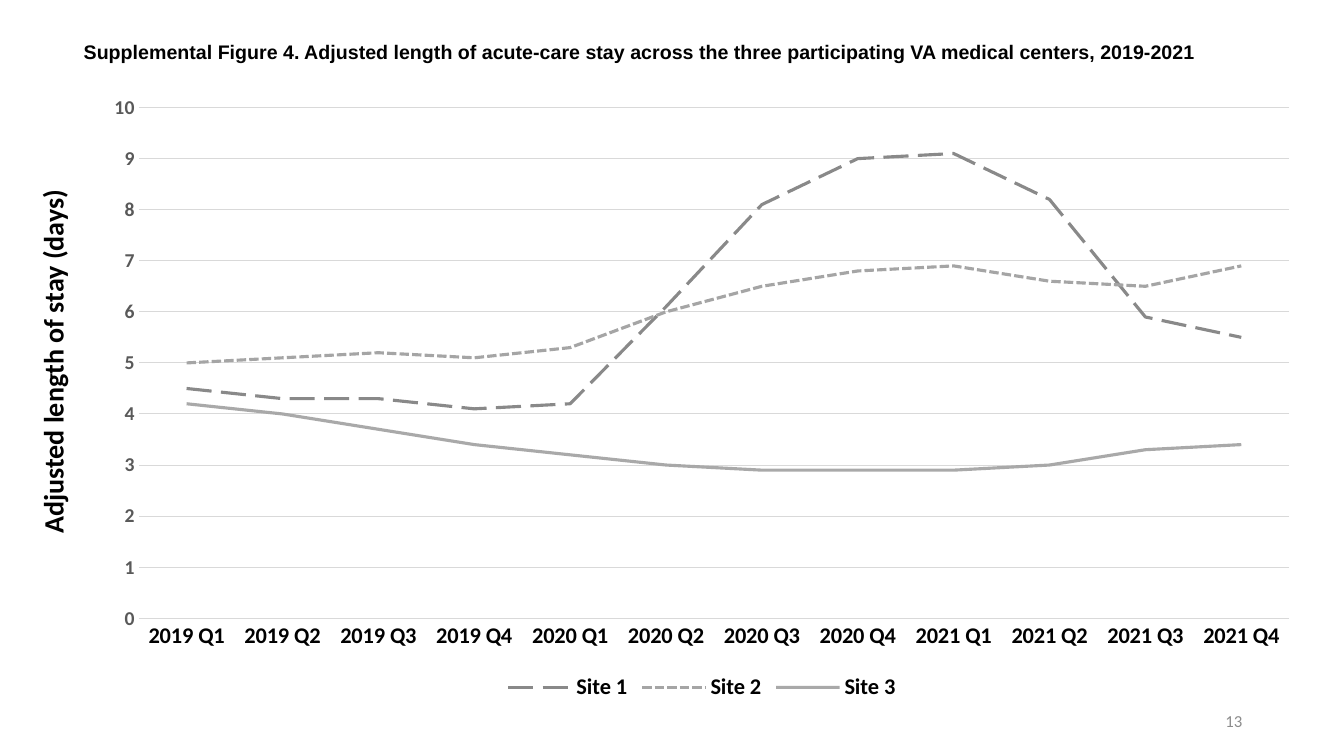
from dataclasses import dataclass
from lxml import etree
from pptx import Presentation
from pptx import util as u
from pptx.chart.data import CategoryChartData
from pptx.dml.color import RGBColor
from pptx.enum import chart as ch, dml, text
from pptx.oxml import parse_xml
from pptx.oxml.ns import nsdecls, qn

# Content
TITLE = ("Supplemental Figure 4. Adjusted length of acute-care stay across "
         "the three participating VA medical centers, 2019-2021")
AXIS = "Adjusted length of stay (days)"
PAGE = "13"
CATS = [f"{year} Q{q}" for year in (2019, 2020, 2021) for q in range(1, 5)]
SITES = {
    "Site 1": (4.5, 4.3, 4.3, 4.1, 4.2, 6.1, 8.1, 9, 9.1, 8.2, 5.9, 5.5),
    "Site 2": (5, 5.1, 5.2, 5.1, 5.3, 6, 6.5, 6.8, 6.9, 6.6, 6.5, 6.9),
    "Site 3": (4.2, 4, 3.7, 3.4, 3.2, 3, 2.9, 2.9, 2.9, 3, 3.3, 3.4),
}


@dataclass(frozen=True)
class Theme:
    ink: str = "000000"
    tick: str = "595959"
    grid: str = "D9D9D9"
    page: str = "8C8C8C"
    dark: str = "898989"
    light: str = "A5A5A5"
    head: str = "Arial"
    body: str = "Calibri"
    big: int = 20
    label: int = 16
    mid: int = 14
    small: int = 12
    base: int = 10


T = Theme()
DASH = dml.MSO_LINE
STYLES = [  # colour, dash, opacity in percent
    (T.dark, DASH.LONG_DASH, 100),
    (T.light, DASH.SQUARE_DOT, 100),
    (T.light, DASH.SOLID, 94),
]
PLOT = {"x": 0.04, "y": 0.04, "w": 0.94, "h": 0.82}  # shares of the chart


def style(font, size, color, name=T.body, bold=True):
    font.size, font.name, font.bold = u.Pt(size), name, bold
    font.color.rgb = RGBColor.from_string(color)


def stroke(line, color, width):
    line.width = u.Pt(width)
    line.color.rgb = RGBColor.from_string(color)


def write(shape, words, *look, align=text.PP_ALIGN.LEFT,
          anchor=text.MSO_ANCHOR.TOP):
    frame = shape.text_frame
    frame.word_wrap = True
    frame.auto_size = text.MSO_AUTO_SIZE.NONE
    frame.vertical_anchor = anchor
    para = frame.paragraphs[0]
    para.alignment = align
    run = para.add_run()
    run.text = words
    style(run.font, *look)


def box(slide, x, y, w, h):
    return slide.shapes.add_textbox(*map(u.Inches, (x, y, w, h)))


deck = Presentation()
deck.slide_width, deck.slide_height = u.Inches(13.33), u.Inches(7.5)
slide = deck.slides.add_slide(deck.slide_layouts[5])

# Chart
data = CategoryChartData(number_format="General")
data.categories = CATS
for name, vals in SITES.items():
    data.add_series(name, vals)
chart = slide.shapes.add_chart(
    ch.XL_CHART_TYPE.LINE, *map(u.Inches, (0.89, 0.82, 12.14, 6.18)), data).chart
chart.has_title = False
style(chart.font, T.base, T.ink, bold=False)

# Axes
cat, val = chart.category_axis, chart.value_axis
for axis, size, color in ((cat, T.label, T.ink), (val, T.mid, T.tick)):
    axis.major_tick_mark = axis.minor_tick_mark = ch.XL_TICK_MARK.NONE
    style(axis.tick_labels.font, size, color)
stroke(cat.format.line, T.grid, 0.75)
val.minimum_scale, val.maximum_scale, val.major_unit = 0, 10, 1
val.format.line.fill.background()
val.has_major_gridlines = True
stroke(val.major_gridlines.format.line, T.grid, 0.75)

# Legend
chart.has_legend = True
chart.legend.position = ch.XL_LEGEND_POSITION.BOTTOM
chart.legend.include_in_layout = False
style(chart.legend.font, T.label, T.ink)

# Lines
plot = chart.plots[0]
plot.vary_by_categories = False
for site, (color, dash, alpha) in zip(plot.series, STYLES):
    site.smooth = False
    site.marker.style = ch.XL_MARKER_STYLE.NONE
    line = site.format.line
    stroke(line, color, 2.25)
    line.dash_style = dash
    if alpha < 100:
        tint = next(site.format.line._get_or_add_ln().iter(qn("a:srgbClr")))
        etree.SubElement(tint, qn("a:alpha")).set("val", str(alpha * 1000))

# Plot area placement
area = chart._chartSpace.chart.plotArea
for old in area.findall(qn("c:layout")):
    area.remove(old)
sizes = "".join(f'<c:{k} val="{v}"/>' for k, v in PLOT.items())
area.insert(0, parse_xml(
    f'<c:layout {nsdecls("c")}><c:manualLayout><c:layoutTarget val="inner"/>'
    '<c:xMode val="edge"/><c:yMode val="edge"/>'
    f'{sizes}</c:manualLayout></c:layout>'))

# Axis caption
side = box(slide, -1.41, 3.24, 3.87, 0.44)
side.rotation = 270
write(side, AXIS, T.big, T.ink)

# Title
title = slide.shapes.title
title.left, title.top, title.width, title.height = map(
    u.Inches, (0.73, 0.35, 12.47, 0.64))
write(title, TITLE, T.mid, T.ink, T.head)

# Page number
write(box(slide, 9.42, 6.95, 3, 0.4), PAGE, T.small, T.page, T.body, False,
      align=text.PP_ALIGN.RIGHT, anchor=text.MSO_ANCHOR.MIDDLE)

deck.save("out.pptx")
